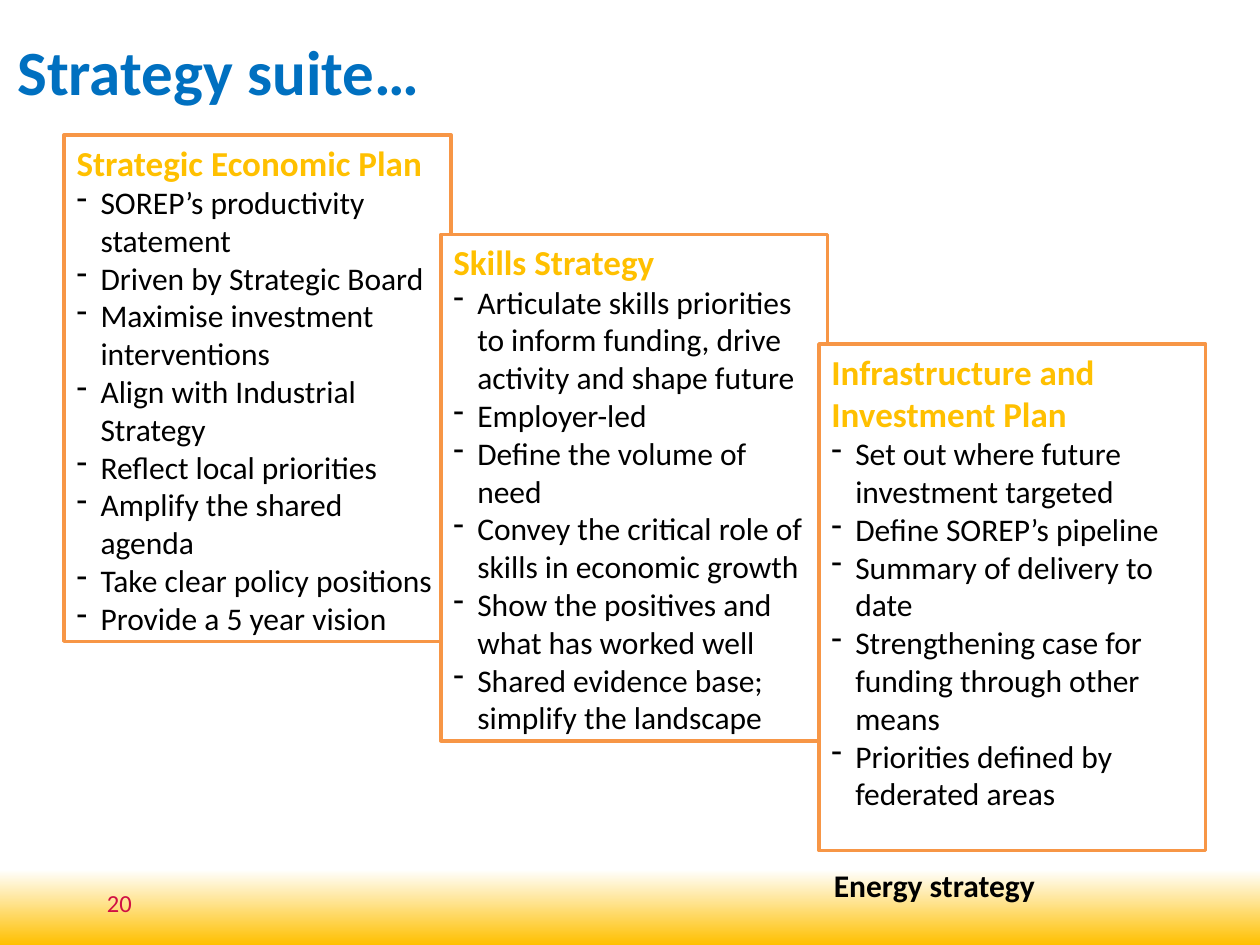
from lxml import etree
from pptx import Presentation
from pptx import util as u
from pptx.dml.color import RGBColor
from pptx.enum import shapes, text
from pptx.oxml.ns import qn

BLUE = RGBColor(0x00, 0x70, 0xC0)
GOLD = RGBColor(0xFF, 0xC0, 0x00)
ORANGE = RGBColor(0xF7, 0x96, 0x46)
CRIMSON = RGBColor(0xD0, 0x0F, 0x44)
BLACK = RGBColor(0, 0, 0)
WHITE = RGBColor(0xFF, 0xFF, 0xFF)

TITLE = {"size": u.Pt(36), "bold": True, "color": BLUE}
HEADING = {"size": u.Pt(20), "bold": True, "color": GOLD}
BODY = {"size": u.Pt(18), "bold": False, "color": BLACK}
NOTE = {"size": u.Pt(18), "bold": True, "color": BLACK}
NUMBER = {"size": u.Pt(14), "bold": False, "color": CRIMSON}

CARD_WIDTH, CARD_HEIGHT = 3.07, 4.02
CARDS = [
    (0.51, 1.07, "Strategic Economic Plan", [
        "SOREP’s productivity statement",
        "Driven by Strategic Board",
        "Maximise investment interventions",
        "Align with Industrial Strategy",
        "Reflect local priorities",
        "Amplify the shared agenda",
        "Take clear policy positions",
        "Provide a 5 year vision",
    ]),
    (3.5, 1.86, "Skills Strategy", [
        "Articulate skills priorities to inform funding, drive activity and shape future",
        "Employer-led",
        "Define the volume of need",
        "Convey the critical role of skills in economic growth",
        "Show the positives and what has worked well",
        "Shared evidence base; simplify the landscape",
    ]),
    (6.5, 2.73, "Infrastructure and Investment Plan", [
        "Set out where future investment targeted",
        "Define SOREP’s pipeline",
        "Summary of delivery to date",
        "Strengthening case for funding through other means",
        "Priorities defined by federated areas",
    ]),
]


def write(paragraph, words, style):
    paragraph.text = words
    paragraph.alignment = text.PP_ALIGN.LEFT
    font = paragraph.runs[0].font
    font.name = "Calibri"
    for name, value in style.items():
        if name == "color":
            font.color.rgb = value
        else:
            setattr(font, name, value)


def add_dash(paragraph):
    properties = paragraph._p.get_or_add_pPr()
    indent = u.Inches(0.19)
    properties.set("marL", str(indent))
    properties.set("indent", str(-indent))
    etree.SubElement(properties, qn("a:buChar")).set("char", "-")


def add_rectangle(slide, box):
    shape = slide.shapes.add_shape(shapes.MSO_SHAPE.RECTANGLE, *map(u.Inches, box))
    shape.shadow.inherit = False
    return shape


def add_label(slide, box, words, style, anchor=text.MSO_ANCHOR.TOP):
    frame = slide.shapes.add_textbox(*map(u.Inches, box)).text_frame
    frame.word_wrap = True
    frame.vertical_anchor = anchor
    write(frame.paragraphs[0], words, style)
    return frame


def add_footer_band(slide, box):
    """Gold at the bottom edge, fading upwards to white."""
    band = add_rectangle(slide, box)
    band.line.fill.background()
    band.fill.gradient()
    band.fill.gradient_angle = 90
    for stop, position, color in zip(band.fill.gradient_stops, (0, 1), (GOLD, WHITE)):
        stop.position = position
        stop.color.rgb = color


def add_card(slide, box, heading, points):
    card = add_rectangle(slide, box)
    card.fill.solid()
    card.fill.fore_color.rgb = WHITE
    card.line.color.rgb = ORANGE
    card.line.width = u.Pt(2)
    frame = card.text_frame
    frame.word_wrap = True
    frame.vertical_anchor = text.MSO_ANCHOR.TOP
    write(frame.paragraphs[0], heading, HEADING)
    for point in points:
        paragraph = frame.add_paragraph()
        add_dash(paragraph)
        write(paragraph, point, BODY)


def main():
    presentation = Presentation()
    presentation.slide_width = u.Inches(10)
    presentation.slide_height = u.Inches(7.5)
    slide = presentation.slides.add_slide(presentation.slide_layouts[6])

    add_footer_band(slide, (0, 6.9, 10, 0.6))
    add_label(slide, (0.75, 7, 2.08, 0.33), "20", NUMBER)
    add_label(slide, (0.04, 0.05, 9, 1.02), "Strategy suite…", TITLE,
              text.MSO_ANCHOR.MIDDLE)
    for left, top, heading, points in CARDS:
        add_card(slide, (left, top, CARD_WIDTH, CARD_HEIGHT), heading, points)
    energy = add_label(slide, (6.52, 6.82, 4.84, 1.81), "Energy strategy", NOTE)
    energy.paragraphs[0].space_after = u.Pt(6)

    presentation.save("out.pptx")


if __name__ == "__main__":
    main()
